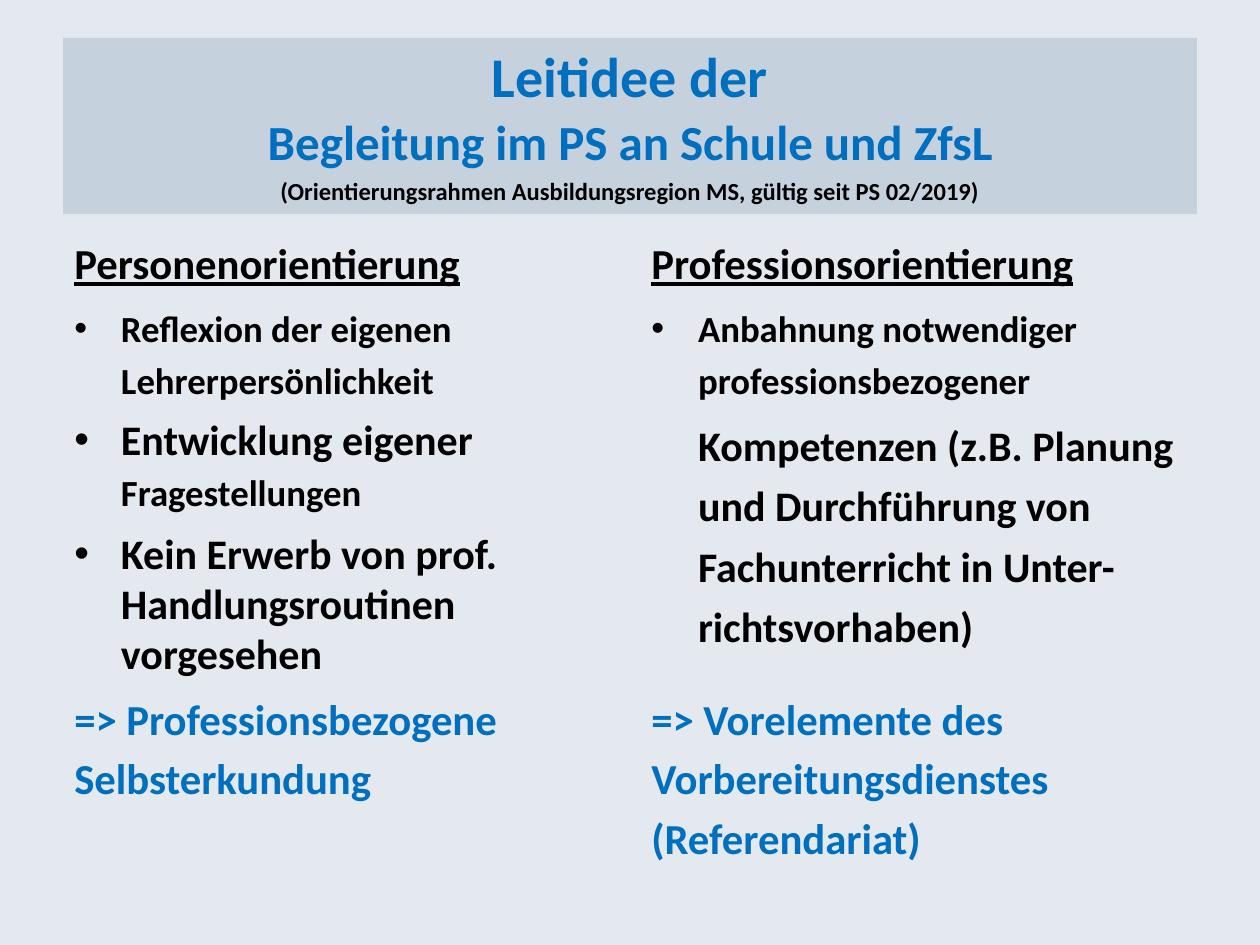
from dataclasses import dataclass

from lxml.etree import SubElement
from pptx import Presentation
from pptx.dml.color import RGBColor
from pptx.enum.text import MSO_ANCHOR, MSO_AUTO_SIZE, PP_ALIGN
from pptx.oxml.ns import qn
from pptx.util import Inches, Pt


@dataclass(frozen=True)
class Theme:
    background: RGBColor = RGBColor(0xE3, 0xE9, 0xEE)
    banner: RGBColor = RGBColor(0xC6, 0xD1, 0xDE)
    accent: RGBColor = RGBColor(0x00, 0x6F, 0xC0)
    ink: RGBColor = RGBColor(0, 0, 0)
    font: str = "Calibri"
    bullet_font: str = "Arial"
    title: float = 32
    subtitle: float = 28
    large: float = 24.4
    body: float = 24
    small: float = 21
    note: float = 14


THEME = Theme()
HANGING = Inches(0.37)

# Each body paragraph: spans (text, size), line pitch, space before, bulleted
COLUMNS = [
    {
        "left": 0.59,
        "width": 3.94,
        "heading": "Personenorientierung",
        "body": [
            ([("Reflexion der eigenen Lehrerpersönlichkeit", THEME.small)], 30, 0, True),
            ([("Entwicklung eigener ", THEME.body),
              ("Fragestellungen", THEME.small)], 28.5, 7, True),
            ([("Kein Erwerb von prof. Handlungsroutinen vorgesehen",
               THEME.body)], 28.5, 8, True),
        ],
        "body_width": 3.45,
        "conclusion": "=> Professionsbezogene Selbsterkundung",
    },
    {
        "left": 5.17,
        "width": 3.93,
        "heading": "Professionsorientierung",
        "body": [
            ([("Anbahnung notwendiger professionsbezogener", THEME.small)], 30, 0, True),
            ([("Kompetenzen (z.B. Planung und Durchführung von "
               "Fachunterricht in Unter- richtsvorhaben)", THEME.body)],
             34.6, 3.8, False),
        ],
        "body_width": 4.35,
        "conclusion": "=> Vorelemente des Vorbereitungsdienstes (Referendariat)",
    },
]


def prepare_frame(shape):
    frame = shape.text_frame
    frame.word_wrap = True
    frame.auto_size = MSO_AUTO_SIZE.NONE
    frame.vertical_anchor = MSO_ANCHOR.TOP
    frame.margin_left = frame.margin_right = 0
    frame.margin_top = frame.margin_bottom = 0
    return frame


def add_box(slide, left, top, width, height):
    box = slide.shapes.add_textbox(
        Inches(left), Inches(top), Inches(width), Inches(height))
    return prepare_frame(box)


def next_para(frame, pitch, before=0, align=PP_ALIGN.LEFT):
    """Use the empty first paragraph, or add another one."""
    first = frame.paragraphs[0]
    para = frame.add_paragraph() if first.runs else first
    para.line_spacing = Pt(pitch)
    para.space_before = Pt(before)
    para.alignment = align
    return para


def add_span(para, text, size=THEME.body, color=THEME.ink, underline=None):
    span = para.add_run()
    span.text = text
    span.font.name = THEME.font
    span.font.size = Pt(size)
    span.font.bold = True
    span.font.underline = underline
    span.font.color.rgb = color


def hang(para, bulleted):
    """Indent a paragraph, with a bullet in the margin if wanted."""
    properties = para._p.get_or_add_pPr()
    properties.set("marL", str(HANGING))
    properties.set("indent", str(-HANGING if bulleted else 0))
    if bulleted:
        SubElement(properties, qn("a:buSzPts"), val=str(THEME.body * 100))
        SubElement(properties, qn("a:buFont"), typeface=THEME.bullet_font)
        SubElement(properties, qn("a:buChar"), char="•")


def add_title(slide):
    title = slide.shapes.title
    title.left, title.top = Inches(0.5), Inches(0.3)
    title.width, title.height = Inches(9), Inches(1.4)
    title.fill.solid()
    title.fill.fore_color.rgb = THEME.banner
    frame = prepare_frame(title)
    lines = [
        ("Leitidee der", THEME.title, THEME.accent, 40.5),
        ("Begleitung im PS an Schule und ZfsL", THEME.subtitle, THEME.accent, 35),
        ("(Orientierungsrahmen Ausbildungsregion MS, gültig seit PS 02/2019)",
         THEME.note, THEME.ink, 20),
    ]
    for text, size, color, pitch in lines:
        para = next_para(frame, pitch, align=PP_ALIGN.CENTER)
        add_span(para, text, size=size, color=color)


def add_column(slide, column):
    left, width = column["left"], column["width"]

    # Heading
    frame = add_box(slide, left, 1.88, width, 0.46)
    add_span(next_para(frame, 29.5), column["heading"],
             size=THEME.large, underline=True)

    # Points
    frame = add_box(slide, left, 2.36, column["body_width"], 3.04)
    for spans, pitch, before, bulleted in column["body"]:
        para = next_para(frame, pitch, before)
        hang(para, bulleted)
        for text, size in spans:
            add_span(para, text, size=size)

    # Conclusion
    frame = add_box(slide, left, 5.43, width, 1.46)
    add_span(next_para(frame, 34), column["conclusion"],
             size=THEME.large, color=THEME.accent)


def main():
    deck = Presentation()
    deck.slide_width, deck.slide_height = Inches(10), Inches(7.5)
    slide = deck.slides.add_slide(deck.slide_layouts[5])
    slide.background.fill.solid()
    slide.background.fill.fore_color.rgb = THEME.background
    add_title(slide)
    for column in COLUMNS:
        add_column(slide, column)
    deck.save("out.pptx")


if __name__ == "__main__":
    main()
